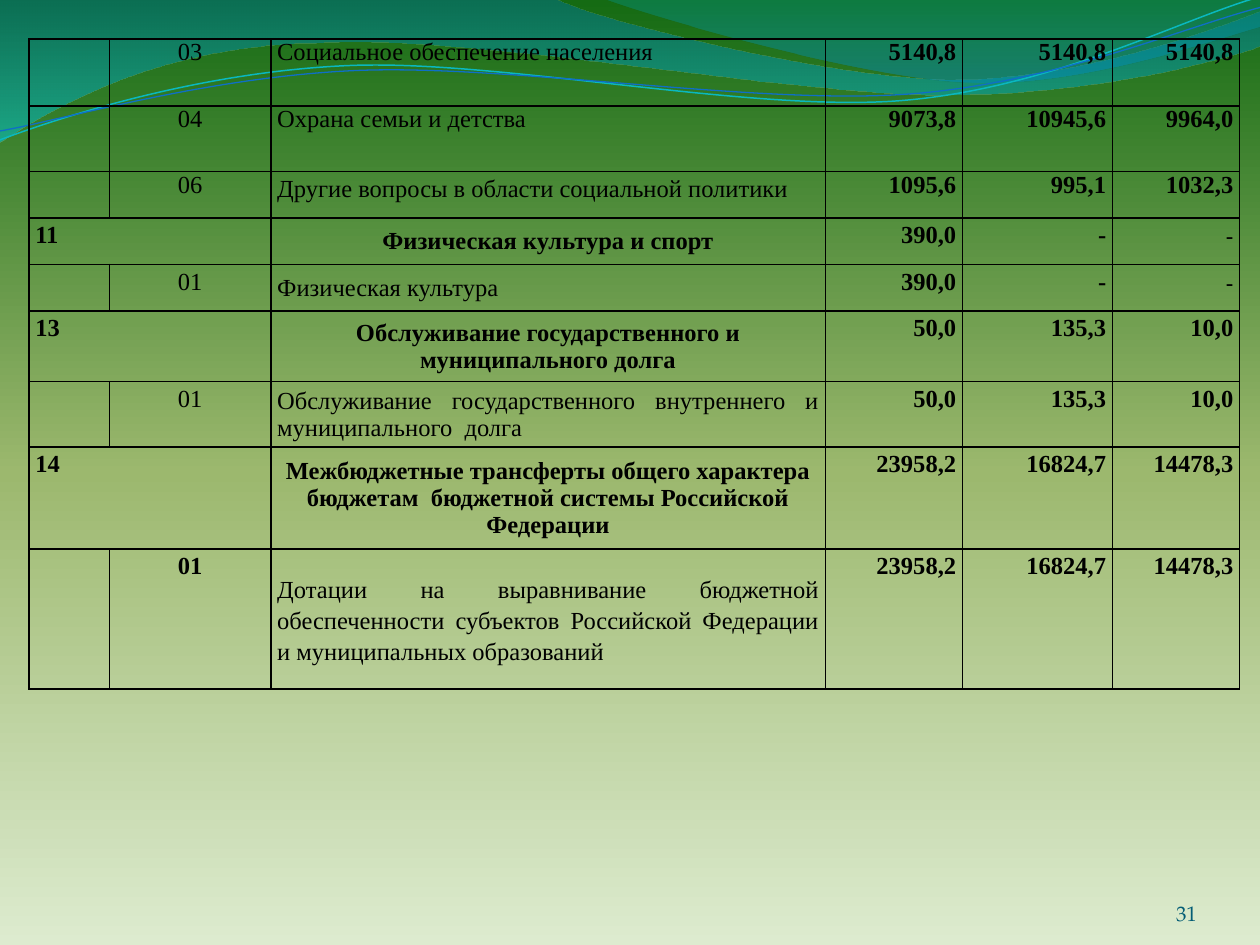
import math

from lxml import etree
from pptx import Presentation
from pptx.dml.color import RGBColor
from pptx.enum import text
from pptx.oxml import ns
from pptx.util import Inches, Pt

BLACK = RGBColor(0x00, 0x00, 0x00)
TEAL = RGBColor(0x04, 0x5D, 0x75)
CYAN = RGBColor(0x0A, 0xB8, 0xBF)
BLUE = RGBColor(0x0F, 0x6F, 0xC6)
LEFT, MID, RIGHT, JUST = (text.PP_ALIGN.LEFT, text.PP_ALIGN.CENTER,
                          text.PP_ALIGN.RIGHT, text.PP_ALIGN.JUSTIFY)

# Gradient stops: position %, colour, opacity %
GREENS = [(0, "DDEBCF", 100), (50, "9CB86E", 100), (100, "156B13", 100)]
SEA = [(0, "0074A1", 45), (100, "00C6CF", 55)]
LAKE = [(0, "00A1A9", 30), (80, "008BBF", 45)]

# Outlines: a start point, then lines (x, y) or cubic curves (six numbers)
WAVE = [(0, -0.01), (4.4, -0.01), (4.76, 0.17, 6.64, 0.63, 7.58, 0.63),
        (8.53, 0.63, 9.58, 0.26, 10, 0.09), (10.01, 0.36),
        (9.83, 0.44, 8.7, 0.76, 7.46, 0.75),
        (6.22, 0.75, 3.82, 0.28, 2.57, 0.34),
        (1.29, 0.35, 0.46, 0.83, -0.01, 1.13), (0, -0.01)]
CREST = [(4.79, -0.01), (5.09, 0.11, 6.82, 0.62, 7.69, 0.65),
         (8.56, 0.69, 9.61, 0.32, 10, 0.21), (10, 0), (4.79, -0.01)]
UPPER = [(0, 1.11), (0.48, 0.93, 1.58, 0.57, 2.77, 0.52),
         (3.95, 0.47, 5.93, 0.89, 7.13, 0.8),
         (8.33, 0.71, 9.38, 0.15, 9.98, -0.02)]
LOWER = [(0, 1.04), (0.47, 0.96, 1.64, 0.61, 2.83, 0.56),
         (4.03, 0.51, 5.97, 0.83, 7.17, 0.75),
         (8.36, 0.67, 9.41, 0.21, 10, 0.06)]
TILT = 357.3

COLS = [0.64, 1.28, 4.4, 1.09, 1.19, 1.01]
ROWS = [0.53, 0.52, 0.37, 0.37, 0.37, 0.56, 0.52, 0.81, 1.11]
BUDGET = [
    ("", "03", "Социальное обеспечение населения", "5140,8", "5140,8", "5140,8"),
    ("", "04", "Охрана семьи и детства", "9073,8", "10945,6", "9964,0"),
    ("", "06", "Другие вопросы в области социальной политики",
     "1095,6", "995,1", "1032,3"),
    ("11", "", "Физическая культура и спорт", "390,0", "-", "-"),
    ("", "01", "Физическая культура", "390,0", "-", "-"),
    ("13", "", "Обслуживание государственного и муниципального долга",
     "50,0", "135,3", "10,0"),
    ("", "01", "Обслуживание государственного внутреннего и муниципального  долга",
     "50,0", "135,3", "10,0"),
    ("14", "", "Межбюджетные трансферты общего характера бюджетам  "
     "бюджетной системы Российской Федерации", "23958,2", "16824,7", "14478,3"),
    ("", "01", "Дотации на выравнивание бюджетной обеспеченности субъектов "
     "Российской Федерации и муниципальных образований",
     "23958,2", "16824,7", "14478,3"),
]
NAME = 2      # column of the names; amounts follow it
LAST = len(BUDGET) - 1


def level(x, y, hub, tilt):
    """Undo a clockwise tilt of a point about the hub."""
    turn = math.radians(-tilt)
    dx, dy = x - hub[0], y - hub[1]
    return (Inches(hub[0] + dx * math.cos(turn) - dy * math.sin(turn)),
            Inches(hub[1] + dx * math.sin(turn) + dy * math.cos(turn)))


def bend(shape, segs):
    """Join each three line steps of a curve into one cubic."""
    steps = iter(shape._element.findall(".//" + ns.qn("a:lnTo")))
    for seg in segs:
        first = next(steps)
        if len(seg) == 6:
            cubic = etree.Element(ns.qn("a:cubicBezTo"))
            first.addprevious(cubic)
            for step in (first, next(steps), next(steps)):
                cubic.append(step[0])
                step.getparent().remove(step)


def shade(fill, owner, stops, angle):
    """Give a fill any number of stops; the angle runs clockwise."""
    fill.gradient()
    grad = owner.find(".//" + ns.qn("a:gradFill"))
    for kid in list(grad):
        grad.remove(kid)
    group = etree.SubElement(grad, ns.qn("a:gsLst"))
    for pos, hue, alpha in stops:
        stop = etree.SubElement(group, ns.qn("a:gs"), pos=str(pos * 1000))
        color = etree.SubElement(stop, ns.qn("a:srgbClr"), val=hue)
        if alpha < 100:
            etree.SubElement(color, ns.qn("a:alpha"), val=str(alpha * 1000))
    etree.SubElement(grad, ns.qn("a:lin"), ang=str(angle * 60000), scaled="0")


def border(cell, width=1):
    props = cell._tc.get_or_add_tcPr()
    for i, side in enumerate("LRTB"):
        line = etree.Element(ns.qn("a:ln" + side), w=str(Pt(width)))
        fill = etree.SubElement(line, ns.qn("a:solidFill"))
        etree.SubElement(fill, ns.qn("a:srgbClr"), val=str(BLACK))
        props.insert(i, line)


class Deck:
    font, size = "Times New Roman", 14

    def __init__(self):
        self.prs = Presentation()
        self.prs.slide_width, self.prs.slide_height = Inches(10), Inches(7.5)
        self.slide = self.prs.slides.add_slide(self.prs.slide_layouts[6])

    def ground(self, stops):
        shade(self.slide.background.fill, self.slide._element, stops, 270)

    def free(self, line, close, hub=(0, 0), tilt=0):
        pts = [level(*seg[i:i + 2], hub, tilt)
               for seg in line for i in range(0, len(seg), 2)]
        pen = self.slide.shapes.build_freeform(*pts[0], scale=1.0)
        pen.add_line_segments(pts[1:], close=close)
        shape = pen.convert_to_shape()
        bend(shape, line[1:])
        shape.rotation = tilt
        shape.shadow.inherit = False
        return shape

    def band(self, line, stops):
        shape = self.free(line, True)
        shade(shape.fill, shape._element, stops, 90)
        shape.line.fill.background()

    def curve(self, line, hub, color, width):
        shape = self.free(line, False, hub, TILT)
        shape.fill.background()
        shape.line.color.rgb = color
        shape.line.width = Pt(width)

    def style(self, par, align, font=None, size=None, color=BLACK, bold=False):
        par.alignment = align
        par.font.name = font or self.font
        par.font.size = Pt(size or self.size)
        par.font.color.rgb = color
        par.font.bold = bold

    def label(self, words, x, y, w, h, **look):
        box = self.slide.shapes.add_textbox(*map(Inches, (x, y, w, h)))
        frame = box.text_frame
        frame.word_wrap = True
        frame.vertical_anchor = text.MSO_ANCHOR.BOTTOM
        frame.margin_left = frame.margin_right = 0
        frame.margin_top = frame.margin_bottom = 0
        frame.text = words
        self.style(frame.paragraphs[0], **look)

    def table(self, data, x, y):
        grid = self.slide.shapes.add_table(
            len(ROWS), len(COLS), Inches(x), Inches(y),
            Inches(sum(COLS)), Inches(sum(ROWS))).table
        grid.first_row = grid.horz_banding = False
        for col, w in zip(grid.columns, COLS):
            col.width = Inches(w)
        for row, h in zip(grid.rows, ROWS):
            row.height = Inches(h)
        for r, line in enumerate(data):
            for c, words in enumerate(line):
                self.cell(grid.cell(r, c), r, c, words, bool(line[0]))
            if line[0]:
                grid.cell(r, 0).merge(grid.cell(r, 1))

    def cell(self, cell, r, c, words, head):
        cell.margin_left = cell.margin_right = Inches(0.05)
        cell.margin_top = cell.margin_bottom = 0
        cell.fill.background()
        border(cell)
        if not words:
            return
        if c == NAME and r > 2:
            cell.vertical_anchor = text.MSO_ANCHOR.MIDDLE
        cell.text = words
        par = cell.text_frame.paragraphs[0]
        dash = words == "-" and c == len(COLS) - 1
        bold = head or c > NAME or (r == LAST and c == 1)
        align = RIGHT if c > NAME else (LEFT, MID, MID if head else JUST)[c]
        self.style(par, align, "Calibri" if dash else None,
                   bold=bold and not dash)
        if r in (2, LAST) if c == NAME else r > 2:
            par.line_spacing = 1.15
            par.space_after = Pt(10)


def main():
    deck = Deck()
    deck.ground(GREENS)
    deck.band(WAVE, SEA)
    deck.band(CREST, LAKE)
    deck.curve(UPPER, (4.99, 0.58), CYAN, 0.85)
    deck.curve(LOWER, (5, 0.59), BLUE, 0.75)
    deck.label("31", 8.67, 6.95, 0.83, 0.4, align=RIGHT,
               font="TeX Gyre Pagella", size=12, color=TEAL)
    deck.table(BUDGET, 0.23, 0.31)
    deck.prs.save("out.pptx")


if __name__ == "__main__":
    main()
